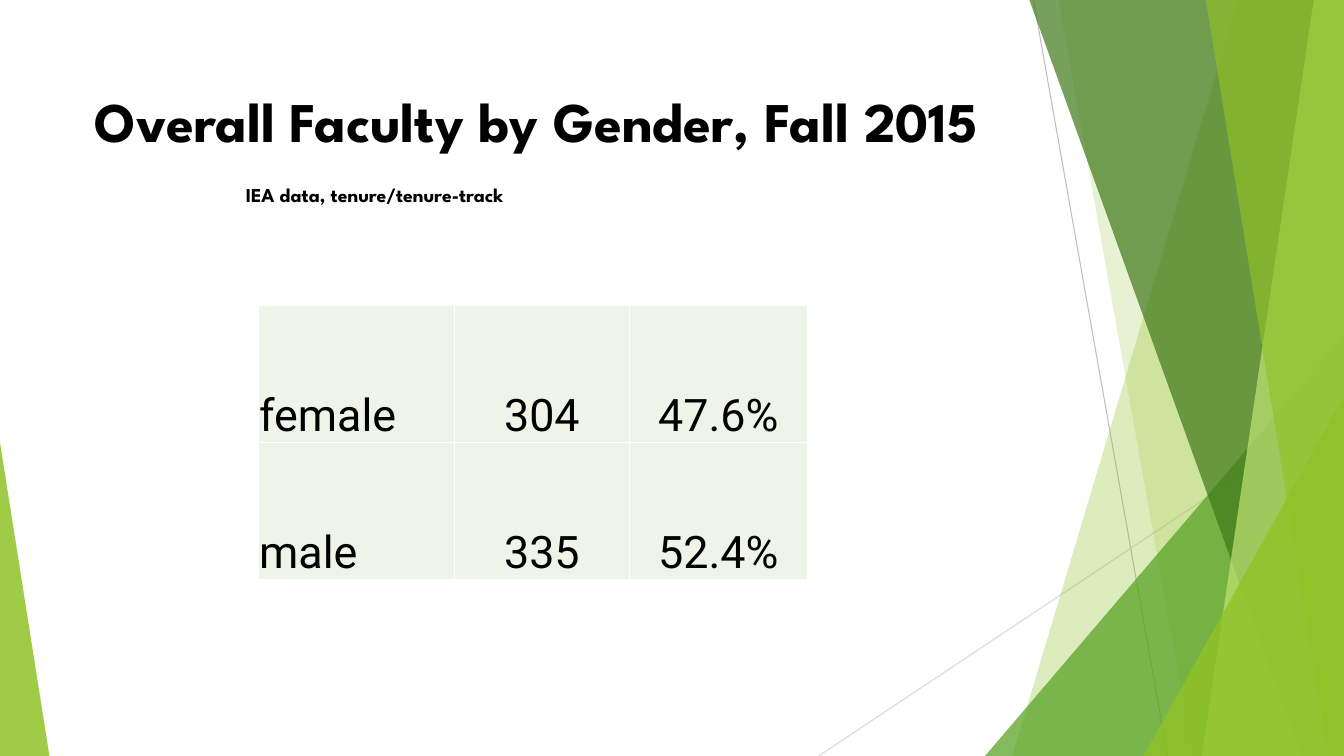
"""Build the slide on overall faculty by gender."""
from lxml.etree import SubElement
from pptx import Presentation
from pptx.dml.color import RGBColor
from pptx.enum.shapes import MSO_CONNECTOR, MSO_SHAPE
from pptx.enum.text import MSO_ANCHOR, PP_ALIGN
from pptx.oxml.ns import qn
from pptx.util import Inches, Pt

WIDE, HIGH = 13.33, 7.5
BLACK = RGBColor(0x00, 0x00, 0x00)
WHITE = RGBColor(0xFF, 0xFF, 0xFF)
MIST = RGBColor(0xEE, 0xF4, 0xE8)
SILVER = RGBColor(0xBF, 0xBF, 0xBF)
PALE = RGBColor(0xD9, 0xD9, 0xD9)
LIME = RGBColor(0x90, 0xC2, 0x26)
LEAF = RGBColor(0x54, 0xA0, 0x21)
PINE = RGBColor(0x3F, 0x78, 0x19)
LIGHT = RGBColor(0xC0, 0xE4, 0x74)

HEAD = {"name": "League Spartan", "size": Pt(40), "bold": True}
NOTE = {**HEAD, "size": Pt(14)}
BODY = {"name": "Roboto", "size": Pt(32), "bold": False}
TIGHT = {"margin_left": Inches(0.01), "margin_right": Inches(0.01),
         "margin_top": Inches(0.01), "margin_bottom": 0,
         "vertical_anchor": MSO_ANCHOR.BOTTOM}
PLAIN = {"first_row": False, "horz_banding": False}
ROWS = [("female", "304", "47.6%"), ("male", "335", "52.4%")]
COLS = [1.95, 1.73, 1.77]


def apply(item, values):
    """Set each named attribute on the item."""
    for name, value in values.items():
        setattr(item, name, value)


def paint(shape, color, alpha):
    """Fill a shape with a see-through colour and no outline."""
    shape.shadow.inherit = False
    shape.fill.solid()
    shape.fill.fore_color.rgb = color
    shape.line.fill.background()
    tone = shape.fill._xPr.find(".//" + qn("a:srgbClr"))
    SubElement(tone, qn("a:alpha")).set("val", str(alpha * 1000))


def add_line(slide, start, end, color):
    """Draw a thin straight line."""
    line = slide.shapes.add_connector(
        MSO_CONNECTOR.STRAIGHT, *map(Inches, start + end))
    line.line.color.rgb = color
    line.line.width = Pt(0.75)
    SubElement(line._element.spPr, qn("a:effectLst"))


def add_band(slide, top, base, color, alpha):
    """Draw a slanted band that runs to the right edge."""
    build = slide.shapes.build_freeform(Inches(top), 0, scale=1.0)
    points = [(WIDE, 0), (WIDE, HIGH), (base, HIGH)]
    build.add_line_segments([(Inches(x), Inches(y)) for x, y in points])
    paint(build.convert_to_shape(), color, alpha)


def add_wedge(slide, left, top, width, apex, color, alpha):
    """Draw a triangle that stands on the bottom edge."""
    wedge = slide.shapes.add_shape(
        MSO_SHAPE.ISOSCELES_TRIANGLE,
        *map(Inches, (left, top, width, HIGH - top)))
    wedge.adjustments[0] = apex
    paint(wedge, color, alpha)


def write(para, text, style):
    """Put one styled run into a paragraph."""
    run = para.add_run()
    run.text = text
    apply(run.font, style)
    run.font.color.rgb = BLACK


def add_title(slide):
    """Write the heading with the indented source line below it."""
    box = slide.shapes.add_textbox(*map(Inches, (0.34, 0.81, 12.07, 1.2)))
    frame = box.text_frame
    frame.word_wrap = True
    head, note = frame.paragraphs[0], frame.add_paragraph()
    note.space_before = Pt(21)
    for para, indent, text, style in (
            (head, 0.5, "Overall Faculty by Gender, Fall 2015", HEAD),
            (note, 2, "IEA data, tenure/tenure-track", NOTE)):
        para._p.get_or_add_pPr().set("marL", str(Inches(indent)))
        write(para, text, style)


def add_edges(cell):
    """Give a cell white borders and a pale fill."""
    props = cell._tc.get_or_add_tcPr()
    for side in ("lnL", "lnR", "lnT", "lnB"):
        edge = SubElement(props, qn("a:" + side), w=str(Pt(1)))
        fill = SubElement(edge, qn("a:solidFill"))
        SubElement(fill, qn("a:srgbClr"), val=str(WHITE))
    cell.fill.solid()
    cell.fill.fore_color.rgb = MIST


def add_grid(slide):
    """Add the table of counts and shares."""
    table = slide.shapes.add_table(
        len(ROWS), len(COLS),
        *map(Inches, (2.56, 3.03, sum(COLS), 2.72))).table
    apply(table, PLAIN)
    for col, width in zip(table.columns, COLS):
        col.width = Inches(width)
    for row, texts in zip(table.rows, ROWS):
        row.height = Inches(1.36)
        for spot, (cell, text) in enumerate(zip(row.cells, texts)):
            apply(cell, TIGHT)
            add_edges(cell)
            para = cell.text_frame.paragraphs[0]
            para.alignment = PP_ALIGN.CENTER if spot else PP_ALIGN.LEFT
            write(para, text, BODY)


def main():
    """Build and save the slide."""
    deck = Presentation()
    apply(deck, {"slide_width": Inches(WIDE), "slide_height": Inches(HIGH)})
    slide = deck.slides.add_slide(deck.slide_layouts[6])
    add_line(slide, (10.25, 0), (11.58, HIGH), SILVER)
    add_line(slide, (WIDE, 4.03), (8.12, HIGH), PALE)
    add_band(slide, 12.28, 10.04, LIME, 30)
    add_band(slide, 10.5, 11.83, LIME, 20)
    add_wedge(slide, 9.77, 3.33, 3.56, 1, LEAF, 72)
    add_band(slide, 10.21, 12.91, PINE, 70)
    add_band(slide, 13.03, 11.92, LIGHT, 70)
    add_band(slide, 11.96, 13.18, LIME, 65)
    add_wedge(slide, 11.34, 3.93, 1.99, 1, LIME, 80)
    add_wedge(slide, 0, 4.39, 0.49, 0, LIME, 85)
    add_title(slide)
    add_grid(slide)
    deck.save("out.pptx")


if __name__ == "__main__":
    main()
